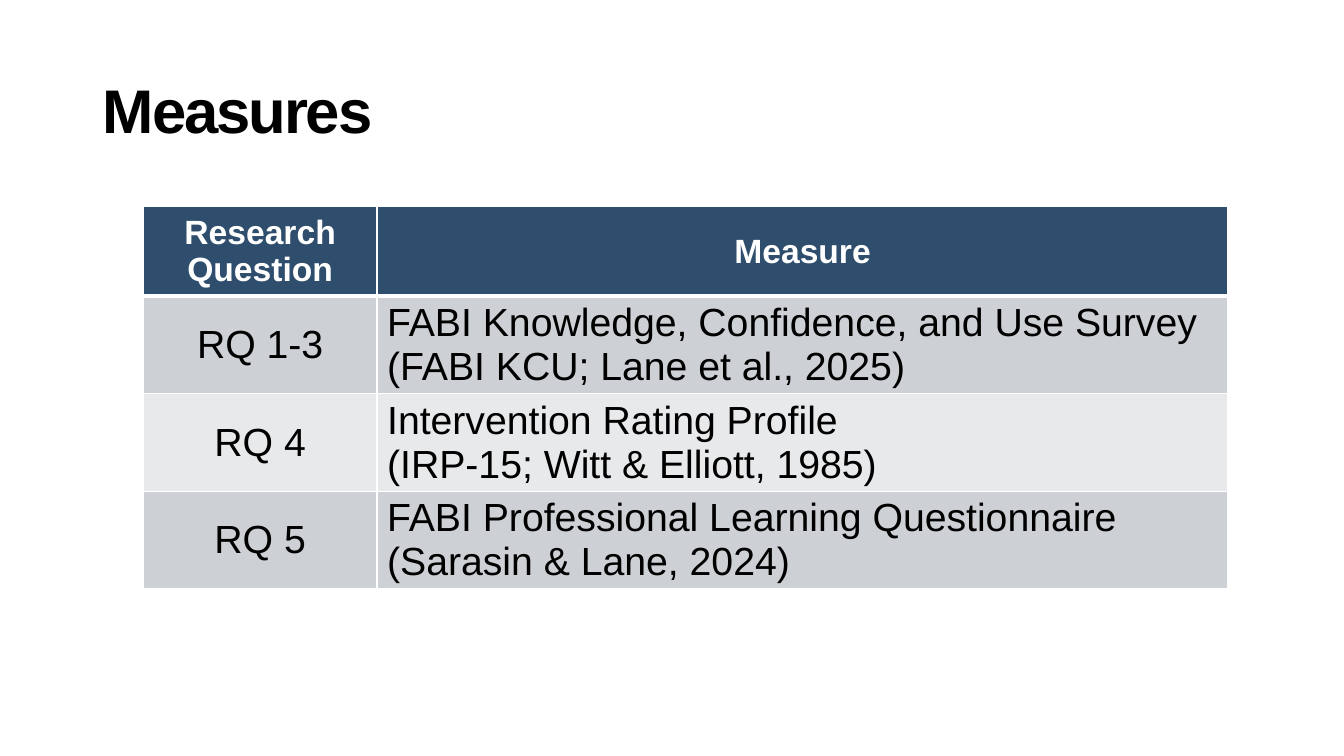
from dataclasses import dataclass

from lxml import etree
from pptx import Presentation
from pptx.dml.color import RGBColor
from pptx.enum.text import MSO_ANCHOR, PP_ALIGN
from pptx.oxml.ns import qn
from pptx.slide import Slide
from pptx.table import _Cell
from pptx.text.text import TextFrame
from pptx.util import Inches, Pt

MIDDLE = MSO_ANCHOR.MIDDLE
LEFT, CENTER = PP_ALIGN.LEFT, PP_ALIGN.CENTER
FONT = "Arial"
COLORS = {
    "black": "000000",
    "white": "FFFFFF",
    "navy": "2F4E6D",
    "dark": "CDD0D4",
    "light": "E8E9EB",
}
WIDTHS = (2.32, 8.44)
HEIGHTS = (0.89, 0.89, 0.89, 0.94)


@dataclass
class Row:
    label: str
    measure: str
    fill: str
    ink: str = "black"
    size: int = 28
    bold: bool = False
    align: PP_ALIGN = LEFT
    rule: int = 1


ROWS = [
    Row("Research Question", "Measure", "navy", "white", 24, True, CENTER, 3),
    Row("RQ 1-3", "FABI Knowledge, Confidence, and Use Survey\n(FABI KCU; Lane et al., 2025)", "dark"),
    Row("RQ 4", "Intervention Rating Profile\n(IRP-15; Witt & Elliott, 1985)", "light"),
    Row("RQ 5", "FABI Professional Learning Questionnaire\n(Sarasin & Lane, 2024)", "dark"),
]


def color(name: str) -> RGBColor:
    return RGBColor.from_string(COLORS[name])


def style(frame: TextFrame, size: int, ink: str, bold: bool, align: PP_ALIGN) -> None:
    for para in frame.paragraphs:
        para.alignment = align
        for run in para.runs:
            run.font.name = FONT
            run.font.size = Pt(size)
            run.font.bold = bold
            run.font.color.rgb = color(ink)


def border(cell: _Cell, top: int, bottom: int) -> None:
    props = cell._tc.get_or_add_tcPr()
    for side, width in (("L", 1), ("R", 1), ("T", top), ("B", bottom)):
        line = etree.SubElement(props, qn(f"a:ln{side}"), w=str(Pt(width)))
        fill = etree.SubElement(line, qn("a:solidFill"))
        etree.SubElement(fill, qn("a:srgbClr"), val=COLORS["white"])


def add_title(slide: Slide) -> None:
    title = slide.shapes.title
    title.left, title.top = Inches(0.92), Inches(0.4)
    title.width, title.height = Inches(11.5), Inches(1.45)
    frame = title.text_frame
    frame.text = "Measures"
    frame.vertical_anchor = MIDDLE
    style(frame, 44, "black", True, LEFT)
    para = frame.paragraphs[0]
    para.line_spacing = 0.9
    # Tighter letter spacing, in hundredths of a point
    para.runs[0]._r.get_or_add_rPr().set("spc", "-150")


def add_grid(slide: Slide) -> None:
    frame = slide.shapes.add_table(
        len(ROWS), len(WIDTHS), Inches(1.42), Inches(2.05),
        Inches(sum(WIDTHS)), Inches(sum(HEIGHTS)))
    table = frame.table
    for col, width in zip(table.columns, WIDTHS):
        col.width = Inches(width)
    top = 1
    for line, height, row in zip(table.rows, HEIGHTS, ROWS):
        line.height = Inches(height)
        parts = ((row.label, CENTER), (row.measure, row.align))
        for cell, (text, align) in zip(line.cells, parts):
            cell.text_frame.text = text
            cell.vertical_anchor = MIDDLE
            style(cell.text_frame, row.size, row.ink, row.bold, align)
            border(cell, top, row.rule)
            cell.fill.solid()
            cell.fill.fore_color.rgb = color(row.fill)
        top = row.rule


def main() -> None:
    deck = Presentation()
    deck.slide_width, deck.slide_height = Inches(13.33), Inches(7.5)
    # Title Only layout
    slide = deck.slides.add_slide(deck.slide_layouts[5])
    add_title(slide)
    add_grid(slide)
    deck.save("out.pptx")


if __name__ == "__main__":
    main()
